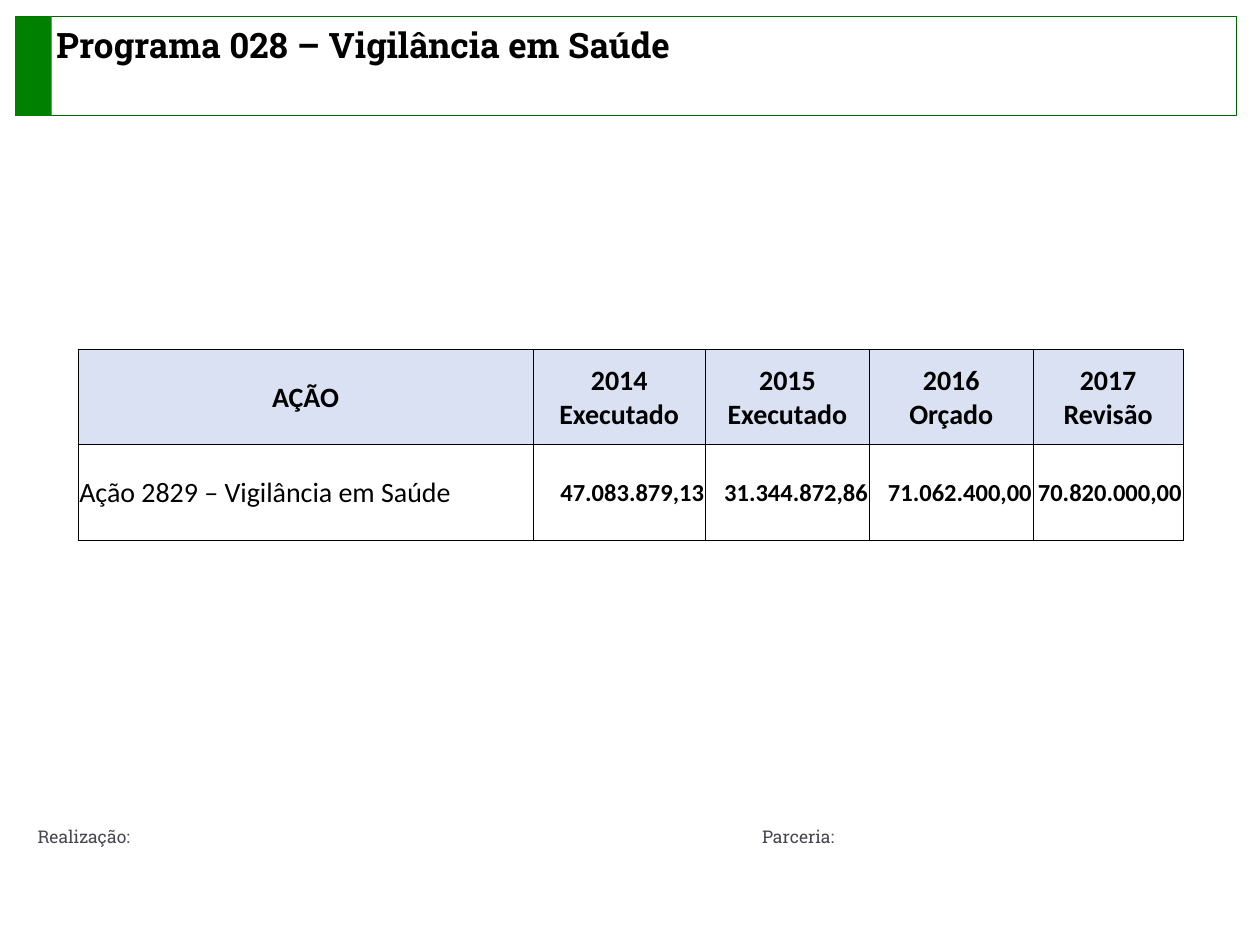
"""Build the budget slide for Programa 028 – Vigilância em Saúde."""
import pptx
import pptx.dml.color
import pptx.enum.shapes
import pptx.enum.text
import pptx.oxml
import pptx.oxml.ns
import pptx.util

Inches, Pt = pptx.util.Inches, pptx.util.Pt
RGB = pptx.dml.color.RGBColor.from_string
ALIGN = pptx.enum.text.PP_ALIGN
MIDDLE = pptx.enum.text.MSO_ANCHOR.MIDDLE
RECT = pptx.enum.shapes.MSO_SHAPE.RECTANGLE
COLORS = {"frame": "006600", "bar": "008000", "header": "D9E1F2",
          "text": "000000", "footer": "464653"}


def write(tf, text, align, color, **fmt):
    for i, line in enumerate(text.split("\n")):
        p = tf.paragraphs[0] if i == 0 else tf.add_paragraph()
        p.alignment = align
        r = p.add_run()
        r.text = line
        r.font.color.rgb = RGB(COLORS[color])
        for name, value in fmt.items():
            setattr(r.font, name, value)


def add_border(cell):
    for side in ("lnL", "lnR", "lnT", "lnB"):
        cell._tc.get_or_add_tcPr().append(pptx.oxml.parse_xml(
            f'<a:{side} {pptx.oxml.ns.nsdecls("a")} w="{Pt(0.5)}"><a:solidFill>'
            f'<a:srgbClr val="{COLORS["text"]}"/></a:solidFill></a:{side}>'))


prs = pptx.Presentation()
prs.slide_width, prs.slide_height = Inches(10), Inches(7.5)
s = prs.slides.add_slide(prs.slide_layouts[6])

for width, part in ((9.69, "frame"), (0.29, "bar")):
    sp = s.shapes.add_shape(RECT, Inches(0.12), Inches(0.13), Inches(width), Inches(0.79))
    sp.shadow.inherit = False
    if part == "frame":
        sp.fill.background()
        sp.line.color.rgb = RGB(COLORS[part])
        sp.line.width = Pt(0.5)
    else:
        sp.fill.solid()
        sp.fill.fore_color.rgb = RGB(COLORS[part])
        sp.line.fill.background()

texts = (
    (0.35, 0.14, 9.37, 0.74, "Programa 028 – Vigilância em Saúde", ALIGN.JUSTIFY, "text", 20, True),
    (0.2, 6.51, 3, 0.31, "Realização:", ALIGN.LEFT, "footer", 10, False),
    (5.95, 6.51, 3, 0.31, "Parceria:", ALIGN.LEFT, "footer", 10, False),
)
for x, y, w, h, text, align, color, size, bold in texts:
    tf = s.shapes.add_textbox(Inches(x), Inches(y), Inches(w), Inches(h)).text_frame
    tf.word_wrap = True
    write(tf, text, align, color, name="Roboto Slab", size=Pt(size), bold=bold)

rows = (
    ("AÇÃO", "2014\nExecutado", "2015\nExecutado", "2016\nOrçado", "2017\nRevisão"),
    ("Ação 2829 – Vigilância em Saúde", "47.083.879,13", "31.344.872,86",
     "71.062.400,00", "70.820.000,00"),
)
widths = (3.61, 1.37, 1.3, 1.3, 1.19)
tbl = s.shapes.add_table(len(rows), len(widths), Inches(0.62), Inches(2.77),
                         Inches(sum(widths)), Inches(1.52)).table
for col, width in zip(tbl.columns, widths):
    col.width = Inches(width)
cell_format = {"vertical_anchor": MIDDLE, "margin_left": Inches(0.01),
               "margin_right": Inches(0.01), "margin_top": Inches(0.01), "margin_bottom": 0}
for i, row in enumerate(rows):
    tbl.rows[i].height = Inches(0.76)
    for j, text in enumerate(row):
        cell = tbl.cell(i, j)
        for name, value in cell_format.items():
            setattr(cell, name, value)
        add_border(cell)
        if i == 0:
            cell.fill.solid()
            cell.fill.fore_color.rgb = RGB(COLORS["header"])
            align, size, bold = ALIGN.CENTER, 16, True
        else:
            cell.fill.background()
            align, size, bold = (ALIGN.RIGHT, 14, True) if j else (ALIGN.LEFT, 16, False)
        write(cell.text_frame, text, align, "text", name="Calibri", size=Pt(size), bold=bold)

prs.save("out.pptx")
